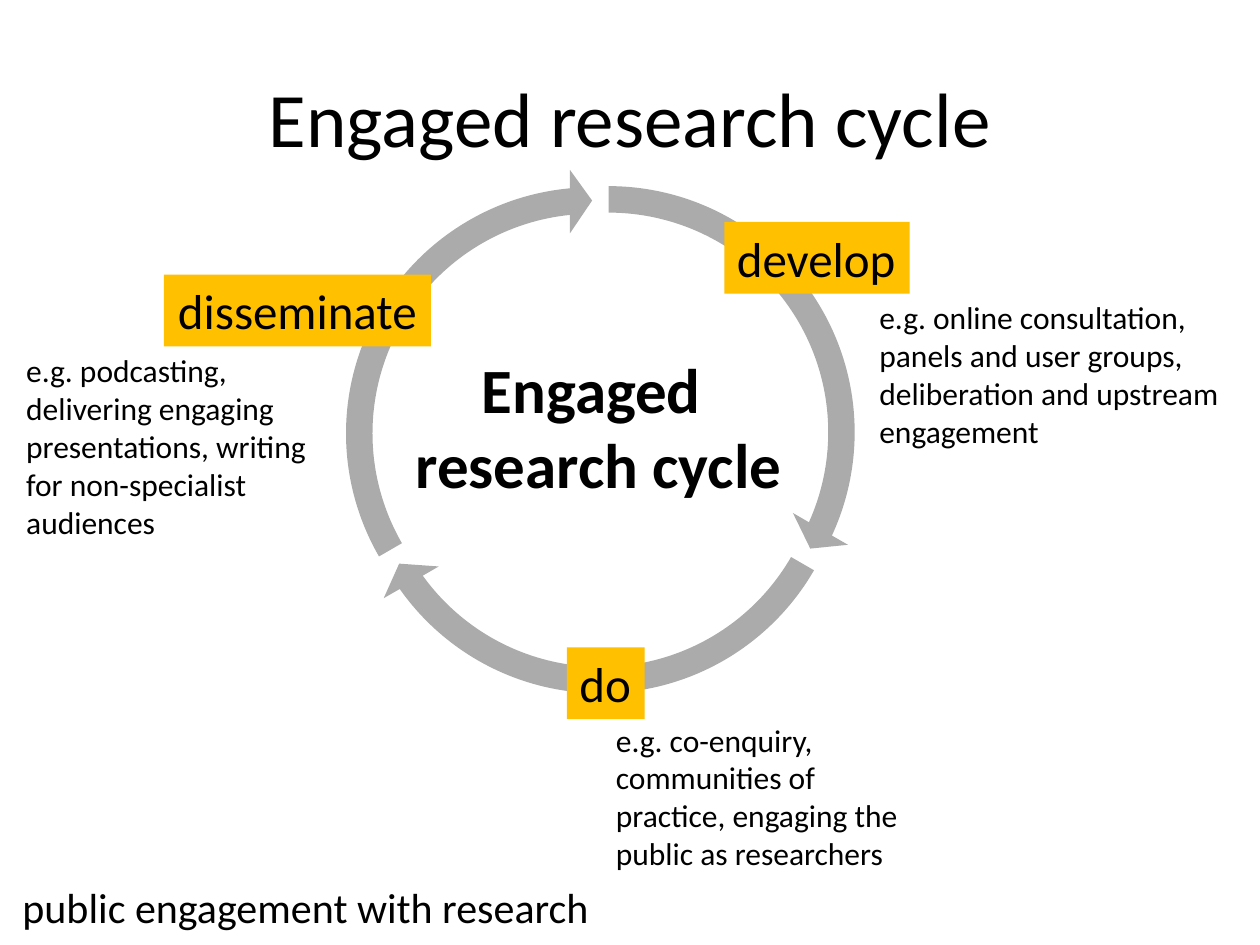
"""Build the engaged research cycle slide: three arrows in a ring, with labelled stages."""
from pptx import Presentation
from pptx.dml.color import RGBColor
from pptx.enum.shapes import MSO_SHAPE
from pptx.enum.text import MSO_ANCHOR, MSO_AUTO_SIZE, PP_ALIGN
from pptx.util import Pt

LEFT, CENTER = PP_ALIGN.LEFT, PP_ALIGN.CENTER
TOP, MIDDLE = MSO_ANCHOR.TOP, MSO_ANCHOR.MIDDLE
GROW, FIXED = MSO_AUTO_SIZE.SHAPE_TO_FIT_TEXT, MSO_AUTO_SIZE.NONE
ARROW, RECTANGLE = MSO_SHAPE.CIRCULAR_ARROW, MSO_SHAPE.RECTANGLE

THEME = {
    "font": "Calibri",
    "text": RGBColor(0x00, 0x00, 0x00),
    "arrow": RGBColor(0xAB, 0xAB, 0xAB),
    "label": RGBColor(0xFF, 0xC0, 0x00),
    "title_size": 44, "center_size": 36, "label_size": 28,
    "footer_size": 24, "example_size": 18,
}

TITLE = ("Engaged research cycle", (36, 21.6, 648, 90))
FOOTER = ("public engagement with research", (5.76, 500.4, 341.3, 36))
CENTER_TEXT = ("Engaged \nresearch cycle", (229, 196.6, 226, 94.3))
STAGES = [
    {"name": "develop", "label": (414, 126.8, 105.8, 41), "align": LEFT,
     "example": "e.g. online consultation, panels and user groups, "
                "deliberation and upstream\nengagement",
     "area": (495.4, 167, 214.6, 94.3)},
    {"name": "do", "label": (324, 370, 44.4, 41), "align": LEFT,
     "example": "e.g. co-enquiry, communities of practice, "
                "engaging the public as researchers",
     "area": (344.9, 408.2, 177.1, 94.3)},
    {"name": "disseminate", "label": (93.6, 157, 152.6, 41), "align": CENTER,
     "example": "e.g. podcasting, delivering engaging presentations, "
                "writing for non-specialist audiences",
     "area": (7.9, 197.3, 187.2, 116.6)},
]

RING_SIZE = 302.4
RING_CORNERS = [(196.6, 95.8), (192.2, 104.4), (187.2, 96.5)]
THICKNESS, HEAD_ANGLE, HEAD_WIDTH = 0.05, 3.28, 0.06
FIRST_START, FIRST_END, THIRD_TURN, FULL_TURN = 162, 14.72, 72, 216


def place(shape, area):
    shape.left, shape.top, shape.width, shape.height = map(Pt, area)


def write(shape, text, *, size, bold=False, align=LEFT, anchor=TOP, wrap=True, fit=GROW):
    frame = shape.text_frame
    frame.text = text
    frame.word_wrap = wrap
    frame.auto_size = fit
    frame.vertical_anchor = anchor
    for para in frame.paragraphs:
        para.alignment = align
        para.font.name = THEME["font"]
        para.font.size = Pt(size)
        para.font.bold = bold
        para.font.color.rgb = THEME["text"]


def add_text(page, text, area, **style):
    write(page.shapes.add_textbox(*map(Pt, area)), text, **style)


def add_filled(page, kind, area, color):
    shape = page.shapes.add_shape(kind, *map(Pt, area))
    shape.shadow.inherit = False
    shape.fill.solid()
    shape.fill.fore_color.rgb = color
    shape.line.fill.background()
    return shape


def add_ring(page):
    for turn, corner in enumerate(RING_CORNERS):
        arrow = add_filled(page, ARROW, (*corner, RING_SIZE, RING_SIZE), THEME["arrow"])
        start = (FIRST_START + turn * THIRD_TURN) % FULL_TURN
        end = FIRST_END + turn * THIRD_TURN
        for index, value in enumerate((THICKNESS, HEAD_ANGLE, end, start, HEAD_WIDTH)):
            arrow.adjustments[index] = value


def main():
    deck = Presentation()
    deck.slide_width, deck.slide_height = Pt(720), Pt(540)
    page = deck.slides.add_slide(deck.slide_layouts.get_by_name("Title Only"))

    title_text, title_area = TITLE
    place(page.shapes.title, title_area)
    write(page.shapes.title, title_text, size=THEME["title_size"],
          align=CENTER, anchor=MIDDLE, fit=FIXED)

    add_text(page, *FOOTER, size=THEME["footer_size"], wrap=False)
    add_text(page, *CENTER_TEXT, size=THEME["center_size"], bold=True,
             align=CENTER, wrap=False)
    for stage in STAGES:
        add_text(page, stage["example"], stage["area"], size=THEME["example_size"])
    add_ring(page)
    for stage in STAGES:
        label = add_filled(page, RECTANGLE, stage["label"], THEME["label"])
        write(label, stage["name"], size=THEME["label_size"],
              align=stage["align"], wrap=False)

    deck.save("out.pptx")


if __name__ == "__main__":
    main()
